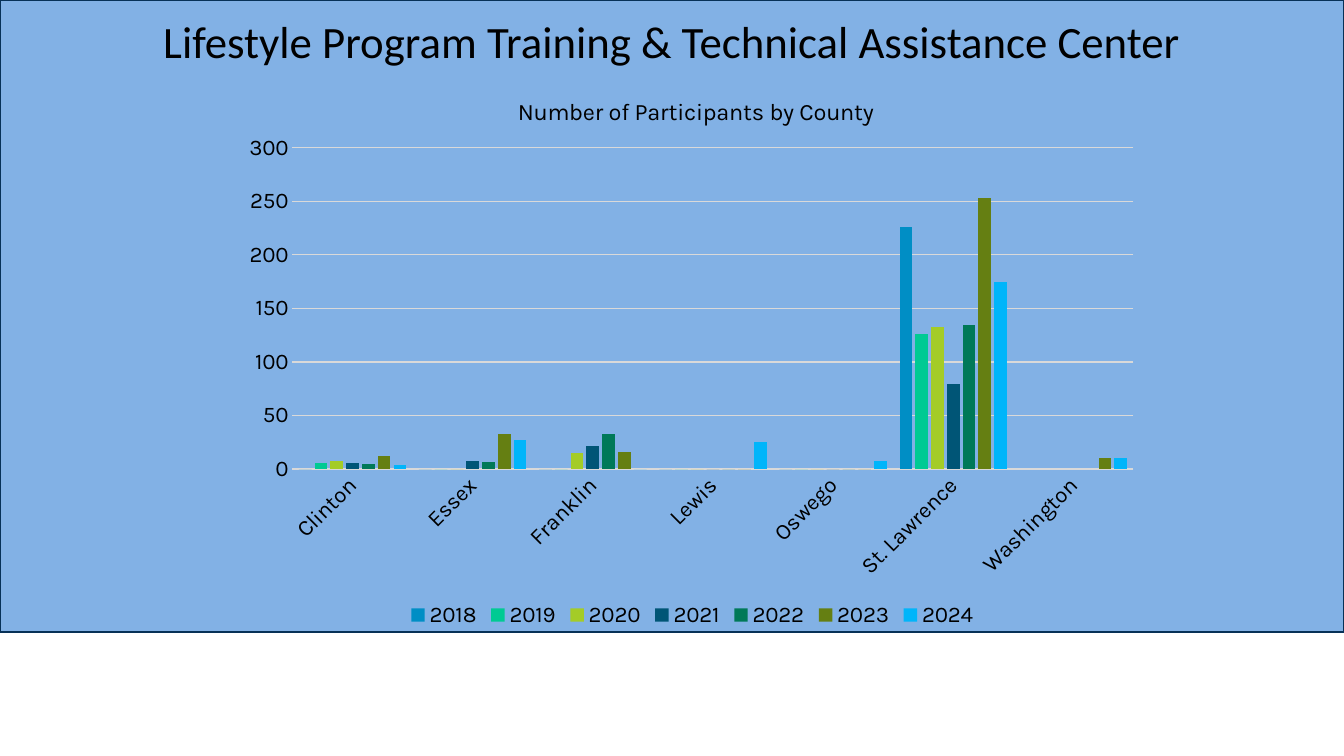
import pptx
import pptx.chart.data
import pptx.dml.color
import pptx.enum.chart
import pptx.enum.shapes
import pptx.enum.text
import pptx.oxml
import pptx.oxml.ns
import pptx.util

Pt = pptx.util.Pt
COUNTIES = ["Clinton", "Essex", "Franklin", "Lewis", "Oswego", "St. Lawrence", "Washington"]
PARTICIPANTS = {
    "2018": ("008EC5", [0, 0, 0, 0, 0, 226, None]),
    "2019": ("00CA93", [0 + 6, 0, 0, 0, 0, 126, None]),
    "2020": ("A4CC27", [8, 0, 15, 0, 0, 133, None]),
    "2021": ("005576", [6, 8, 22, 0, 0, 79, None]),
    "2022": ("007958", [5, 7, 33, 0, 0, 135, None]),
    "2023": ("657F12", [12, 33, 16, 0, 0, 253, 10]),
    "2024": ("00B5FA", [4, 27, 0, 25, 8, 175, 10]),
}


def paint(color_format, color):
    color_format.rgb = pptx.dml.color.RGBColor.from_string(color)


def style_font(font, size, name="Karla"):
    font.size = Pt(size)
    font.name = name
    font.bold = False
    paint(font.color, "000000")


def style_line(line, color, width):
    paint(line.color, color)
    line.width = Pt(width)


def manual_layout(**positions):
    modes = "".join(f'<c:{axis}Mode val="edge"/>' for axis in "xy")
    places = "".join(f'<c:{key} val="{value}"/>' for key, value in positions.items())
    target = '<c:layoutTarget val="inner"/>' if "w" in positions else ""
    return pptx.oxml.parse_xml(
        f'<c:layout {pptx.oxml.ns.nsdecls("c")}>'
        f"<c:manualLayout>{target}{modes}{places}</c:manualLayout></c:layout>")


def place_layout(parent, layout, before):
    for old in parent.findall(pptx.oxml.ns.qn("c:layout")):
        parent.remove(old)
    parent.find(pptx.oxml.ns.qn(before)).addprevious(layout)


def add_panel(slide, left, top, width, height):
    panel = slide.shapes.add_shape(
        pptx.enum.shapes.MSO_SHAPE.RECTANGLE, Pt(left), Pt(top), Pt(width), Pt(height))
    panel.shadow.inherit = False
    panel.fill.solid()
    paint(panel.fill.fore_color, "82B1E5")
    style_line(panel.line, "073157", 0.85)
    slide.shapes.title.element.addprevious(panel.element)


def add_heading(slide, left, top, width, height):
    heading = slide.shapes.title
    heading.left, heading.top = Pt(left), Pt(top)
    heading.width, heading.height = Pt(width), Pt(height)
    frame = heading.text_frame
    frame.text = "Lifestyle Program Training & Technical Assistance Center"
    frame.vertical_anchor = pptx.enum.text.MSO_ANCHOR.MIDDLE
    frame.auto_size = pptx.enum.text.MSO_AUTO_SIZE.NONE
    frame.word_wrap = True
    paragraph = frame.paragraphs[0]
    paragraph.alignment = pptx.enum.text.PP_ALIGN.CENTER
    paragraph.line_spacing = 0.9
    style_font(paragraph.runs[0].font, 32, "Calibri")


def add_county_chart(slide, left, top, width, height):
    data = pptx.chart.data.CategoryChartData()
    data.categories = COUNTIES
    for year, (color, counts) in PARTICIPANTS.items():
        data.add_series(year, counts)
    chart = slide.shapes.add_chart(
        pptx.enum.chart.XL_CHART_TYPE.COLUMN_CLUSTERED,
        Pt(left), Pt(top), Pt(width), Pt(height), data).chart
    style_font(chart.font, 14)

    chart.has_title = True
    chart.chart_title.include_in_layout = False
    caption = chart.chart_title.text_frame
    caption.text = "Number of Participants by County"
    style_font(caption.paragraphs[0].runs[0].font, 16.8)
    place_layout(chart.chart_title._element, manual_layout(x=0.306, y=0.045), "c:overlay")

    plot = chart.plots[0]
    plot.gap_width = 100
    plot.overlap = -24
    plot.vary_by_categories = False
    for series, (color, counts) in zip(plot.series, PARTICIPANTS.values()):
        series.format.fill.solid()
        paint(series.format.fill.fore_color, color)
    plot_area = chart.element.find(".//" + pptx.oxml.ns.qn("c:plotArea"))
    place_layout(plot_area, manual_layout(x=0.066, y=0.144, w=0.913, h=0.568), "c:barChart")

    for axis in (chart.category_axis, chart.value_axis):
        axis.major_tick_mark = axis.minor_tick_mark = pptx.enum.chart.XL_TICK_MARK.NONE
        style_font(axis.tick_labels.font, 16)
    style_line(chart.category_axis.format.line, "D9D9D9", 1)
    label_body = chart.category_axis._element.find(".//" + pptx.oxml.ns.qn("a:bodyPr"))
    label_body.set("rot", "-2700000")
    label_body.set("vert", "horz")
    counts_axis = chart.value_axis
    counts_axis.minimum_scale, counts_axis.maximum_scale = 0, 300
    counts_axis.major_unit = 50
    counts_axis.format.line.fill.background()
    style_line(counts_axis.major_gridlines.format.line, "D9D9D9", 0.75)

    chart.has_legend = True
    chart.legend.position = pptx.enum.chart.XL_LEGEND_POSITION.BOTTOM
    chart.legend.include_in_layout = False
    style_font(chart.legend.font, 16)


def main():
    deck = pptx.Presentation()
    deck.slide_width, deck.slide_height = Pt(960), Pt(540)
    slide = deck.slides.add_slide(deck.slide_layouts.get_by_name("Title Only"))
    add_panel(slide, 0, 0, 960, 451.5)
    add_heading(slide, 66, 12, 828, 39)
    add_county_chart(slide, 165.5, 47.5, 658, 404)
    deck.save("out.pptx")


if __name__ == "__main__":
    main()
